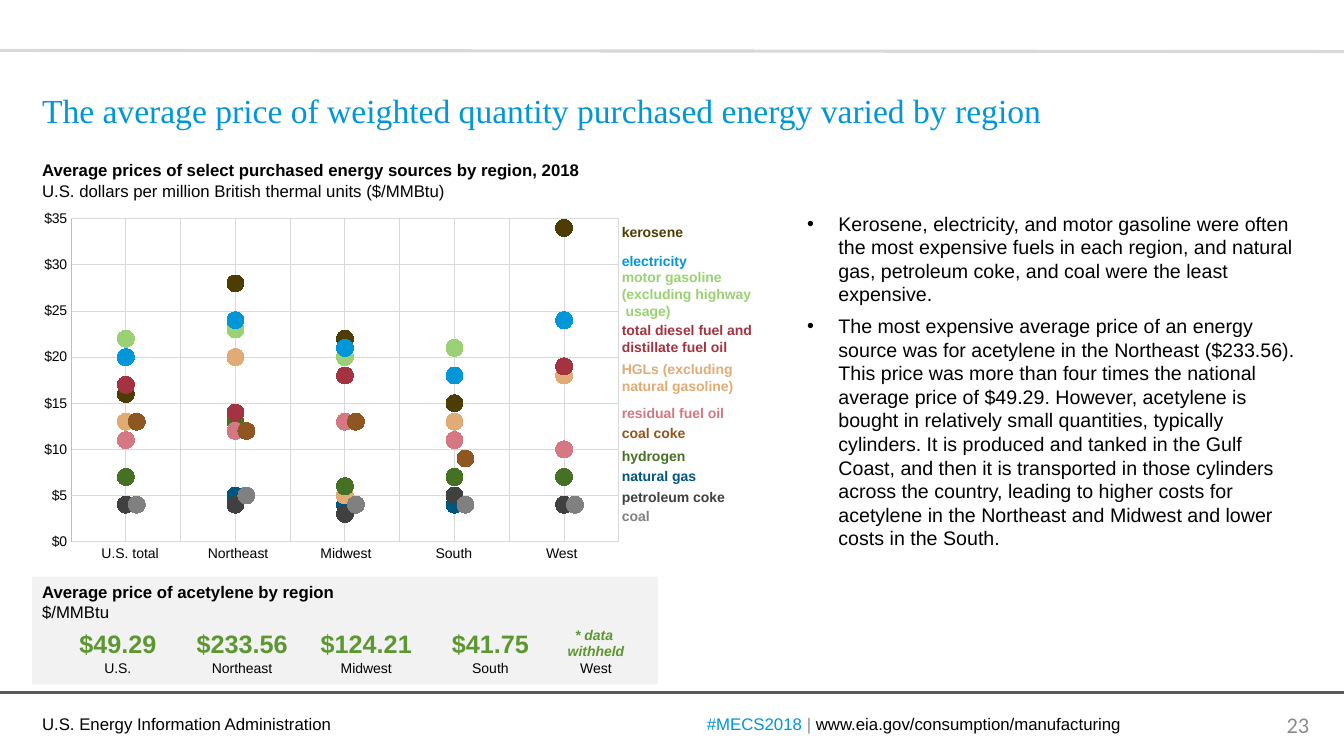
from lxml import etree
from pptx import Presentation
from pptx import util as u
from pptx.chart.data import XyChartData
from pptx.dml.color import RGBColor
from pptx.enum import chart as ch, shapes, text
from pptx.oxml import parse_xml
from pptx.oxml.ns import nsdecls, qn

BLACK = RGBColor(0x00, 0x00, 0x00)
BLUE = RGBColor(0x00, 0x96, 0xD7)
NAVY = RGBColor(0x00, 0x56, 0x7E)
RED = RGBColor(0xA3, 0x33, 0x40)
PINK = RGBColor(0xD5, 0x78, 0x83)
TAN = RGBColor(0xE1, 0xAB, 0x76)
BROWN = RGBColor(0x8E, 0x56, 0x20)
UMBER = RGBColor(0x4D, 0x3C, 0x04)
LIME = RGBColor(0x9B, 0xD1, 0x74)
GREEN = RGBColor(0x5D, 0x97, 0x32)
FOREST = RGBColor(0x46, 0x71, 0x25)
CHARCOAL = RGBColor(0x40, 0x40, 0x40)
DARK_GRAY = RGBColor(0x59, 0x59, 0x59)
GRAY = RGBColor(0x80, 0x80, 0x80)
MID_GRAY = RGBColor(0x8C, 0x8C, 0x8C)
AXIS_GRAY = RGBColor(0xBF, 0xBF, 0xBF)
GRID_GRAY = RGBColor(0xD9, 0xD9, 0xD9)
PANEL_GRAY = RGBColor(0xF2, 0xF2, 0xF2)

LEFT = text.PP_ALIGN.LEFT
CENTER = text.PP_ALIGN.CENTER
TOP = text.MSO_ANCHOR.TOP
MIDDLE = text.MSO_ANCHOR.MIDDLE
BOTTOM = text.MSO_ANCHOR.BOTTOM

REGIONS = ["U.S. total", "Northeast", "Midwest", "South", "West"]
# label lines, label top, colour, first x, prices
FUELS = [
    (["coal"], 7.51, GRAY, 0.6, [4, 5, 4, 4, 4]),
    (["coal coke"], 5.41, BROWN, 0.6, [13, 12, 13, 9]),
    (["petroleum coke"], 7.03, CHARCOAL, 0.5, [4, 4, 3, 5, 4]),
    (["electricity"], 1.09, BLUE, 0.5, [20, 24, 21, 18, 24]),
    (["total diesel fuel and", "distillate fuel oil"], 2.82, RED, 0.5, [17, 14, 18, 18, 19]),
    (["residual fuel oil"], 4.92, PINK, 0.5, [11, 12, 13, 11, 10]),
    (["motor gasoline", "(excluding highway", " usage)"], 1.49, LIME, 0.5, [22, 23, 20, 21, 24]),
    (["hydrogen"], 5.99, FOREST, 0.5, [7, 13, 6, 7, 7]),
    (["kerosene"], 0.35, UMBER, 0.5, [16, 28, 22, 15, 34]),
    (["HGLs (excluding", "natural gasoline)"], 3.81, TAN, 0.5, [13, 20, 5, 13, 18]),
    (["natural gas"], 6.5, NAVY, 0.5, [4, 5, 4, 4, 4]),
]
ACETYLENE = [("$49.29", "U.S."), ("$233.56", "Northeast"), ("$124.21", "Midwest"), ("$41.75", "South")]
FINDINGS = [
    "Kerosene, electricity, and motor gasoline were often the most expensive fuels in each region, "
    "and natural gas, petroleum coke, and coal were the least expensive.",
    "The most expensive average price of an energy source was for acetylene in the Northeast ($233.56). "
    "This price was more than four times the national average price of $49.29. However, acetylene is "
    "bought in relatively small quantities, typically cylinders. It is produced and tanked in the Gulf "
    "Coast, and then it is transported in those cylinders across the country, leading to higher costs "
    "for acetylene in the Northeast and Midwest and lower costs in the South.",
]


def style(font, size, color=BLACK, **values):
    for name, value in {"name": "Arial", "size": u.Pt(size), **values}.items():
        setattr(font, name, value)
    font.color.rgb = color


def run(words, size, color=BLACK, **values):
    return words, size, color, values


def add_text(s, box, paragraphs, align=LEFT, anchor=TOP, wrap=True, grow=True):
    sp = s.shapes.add_textbox(*map(u.Cm, box))
    tf = sp.text_frame
    fit = text.MSO_AUTO_SIZE
    frame = {"word_wrap": wrap, "vertical_anchor": anchor,
             "auto_size": fit.SHAPE_TO_FIT_TEXT if grow else fit.NONE}
    for name, value in frame.items():
        setattr(tf, name, value)
    for i, runs in enumerate(paragraphs):
        p = tf.add_paragraph() if i else tf.paragraphs[0]
        p.alignment = align
        for words, size, color, values in runs:
            r = p.add_run()
            r.text = words
            style(r.font, size, color, **values)
    return tf


def add_rule(s, y1, y2, color):
    ln = s.shapes.add_connector(shapes.MSO_CONNECTOR.STRAIGHT, 0, u.Cm(y1), u.Cm(33.87), u.Cm(y2))
    ln.line.color.rgb = color
    ln.line.width = u.Pt(2.25)
    etree.SubElement(ln._element.spPr, qn("a:effectLst"))


def add_heading(s, box, title, unit):
    add_text(s, box, [[run(title, 12, bold=True)], [run(unit, 12)]])


def add_header(s, x, y, w, h):
    add_rule(s, 1.27, 1.3, GRID_GRAY)
    title = "The average price of weighted quantity purchased energy varied by region"
    add_text(s, (x, y, w, h), [[run(title, 24, BLUE, name="Times New Roman")]], anchor=BOTTOM, grow=False)


def add_footer(s, x, y, w, h):
    add_rule(s, y, y, DARK_GRAY)
    add_text(s, (x, y + 0.41, 9.4, 0.76), [[run("U.S. Energy Information Administration", 12)]])
    link = [run("#MECS2018 ", 12, BLUE), run("| ", 12, MID_GRAY),
            run("www.eia.gov/consumption/manufacturing", 12)]
    add_text(s, (x + 16.51, y + 0.28, 11.43, h), [link], CENTER, MIDDLE, grow=False)
    number = [run("23", 16, MID_GRAY, name="Calibri")]
    add_text(s, (x + w - 1.52, y + 0.3, 1.52, h), [number], CENTER, MIDDLE, grow=False)


def add_price_chart(s, x, y, w, h):
    data = XyChartData()
    for lines, _, _, start, prices in FUELS:
        series = data.add_series(" ".join(line.strip() for line in lines))
        for i, price in enumerate(prices):
            series.add_data_point(start + i, price)
    chart = s.shapes.add_chart(ch.XL_CHART_TYPE.XY_SCATTER, *map(u.Cm, (x, y, w, h)), data).chart
    chart.has_legend = chart.has_title = False
    style(chart.font, 10, name="Calibri")
    plot = chart.plots[0]
    plot.vary_by_categories = False
    for series, (_, _, color, _, _) in zip(plot.series, FUELS):
        series.smooth = False
        series.format.line.fill.background()
        marker = series.marker
        marker.style = ch.XL_MARKER_STYLE.CIRCLE
        marker.size = 12
        marker.format.fill.solid()
        marker.format.fill.fore_color.rgb = color
        marker.format.line.color.rgb = color
    for axis, top, step in ((chart.category_axis, 5, 0.5), (chart.value_axis, 35, 5)):
        values = {"minimum_scale": 0, "maximum_scale": top, "major_unit": step,
                  "has_major_gridlines": True, "major_tick_mark": ch.XL_TICK_MARK.NONE}
        for name, value in values.items():
            setattr(axis, name, value)
        for line, color in ((axis.major_gridlines.format.line, GRID_GRAY), (axis.format.line, AXIS_GRAY)):
            line.color.rgb = color
            line.width = u.Pt(0.75)
    chart.category_axis.visible = False
    labels = chart.value_axis.tick_labels
    labels.number_format = '"$"#,##0'
    labels.number_format_is_linked = False
    style(labels.font, 10)
    area = chart._chartSpace.chart.plotArea
    for old in area.findall(qn("c:layout")):
        area.remove(old)
    modes = '<c:layoutTarget val="inner"/><c:xMode val="edge"/><c:yMode val="edge"/>'
    sizes = '<c:x val="0.065"/><c:y val="0.04"/><c:w val="0.915"/><c:h val="0.915"/>'
    area.insert(0, parse_xml(
        f'<c:layout {nsdecls("c")}><c:manualLayout>{modes}{sizes}</c:manualLayout></c:layout>'))


def add_prices(s, x, y, w, h):
    add_heading(s, (x, y - 1.25, 17.22, 1.27),
                "Average prices of select purchased energy sources by region, 2018",
                "U.S. dollars per million British thermal units ($/MMBtu)")
    add_price_chart(s, x, y, w, h)
    for i, region in enumerate(REGIONS):
        add_text(s, (x + 1.2 + 2.72 * i, y + 8.44, 2.54, 0.68), [[run(region, 10)]], CENTER)
    for lines, top, color, _, _ in FUELS:
        paragraphs = [[run(line, 10, color, bold=True)] for line in lines]
        add_text(s, (x + 14.61, y + top, 3.9, 0.25 + 0.43 * len(lines)), paragraphs, wrap=False)


def add_acetylene(s, x, y, w, h):
    sp = s.shapes.add_shape(shapes.MSO_SHAPE.RECTANGLE, *map(u.Cm, (x, y, w, h)))
    sp.shadow.inherit = False
    sp.fill.solid()
    sp.fill.fore_color.rgb = PANEL_GRAY
    sp.line.fill.background()
    add_heading(s, (x, y, 10.41, 1.27), "Average price of acetylene by region", "$/MMBtu")
    for i, (price, region) in enumerate(ACETYLENE):
        paragraphs = [[run(price, 18, GREEN, bold=True)], [run(region, 10)]]
        add_text(s, (x + 0.13 + 3.13 * i, y + 1.19, 4.06, 1.45), paragraphs, CENTER)
    withheld = [[run(words, 10, GREEN, bold=True, italic=True)] for words in ("* data ", "withheld")]
    add_text(s, (x + w - 3.12, y + 1.12, 3.12, 1.55), withheld + [[run("West", 10)]], CENTER)


def add_findings(s, x, y, w, h):
    tf = add_text(s, (x, y, w, h), [[run(words, 14)] for words in FINDINGS])
    for p in tf.paragraphs:
        p.space_after = u.Pt(6)
        pPr = p._p.get_or_add_pPr()
        pPr.set("marL", str(u.Cm(0.79)))
        pPr.set("indent", str(-u.Cm(0.79)))
        etree.SubElement(pPr, qn("a:buFont")).set("typeface", "Arial")
        etree.SubElement(pPr, qn("a:buChar")).set("char", "•")


def main():
    prs = Presentation()
    prs.slide_width, prs.slide_height = u.Cm(33.87), u.Cm(19.05)
    s = prs.slides.add_slide(prs.slide_layouts[6])
    add_header(s, 0.81, 1.3, 32.23, 2.11)
    add_footer(s, 0.81, 17.45, 32.66, 1.02)
    add_prices(s, 0.81, 5.16, 15.09, 8.89)
    add_acetylene(s, 0.81, 14.53, 15.77, 2.72)
    add_findings(s, 20.09, 5.21, 12.95, 8.84)
    prs.save("out.pptx")


if __name__ == "__main__":
    main()
